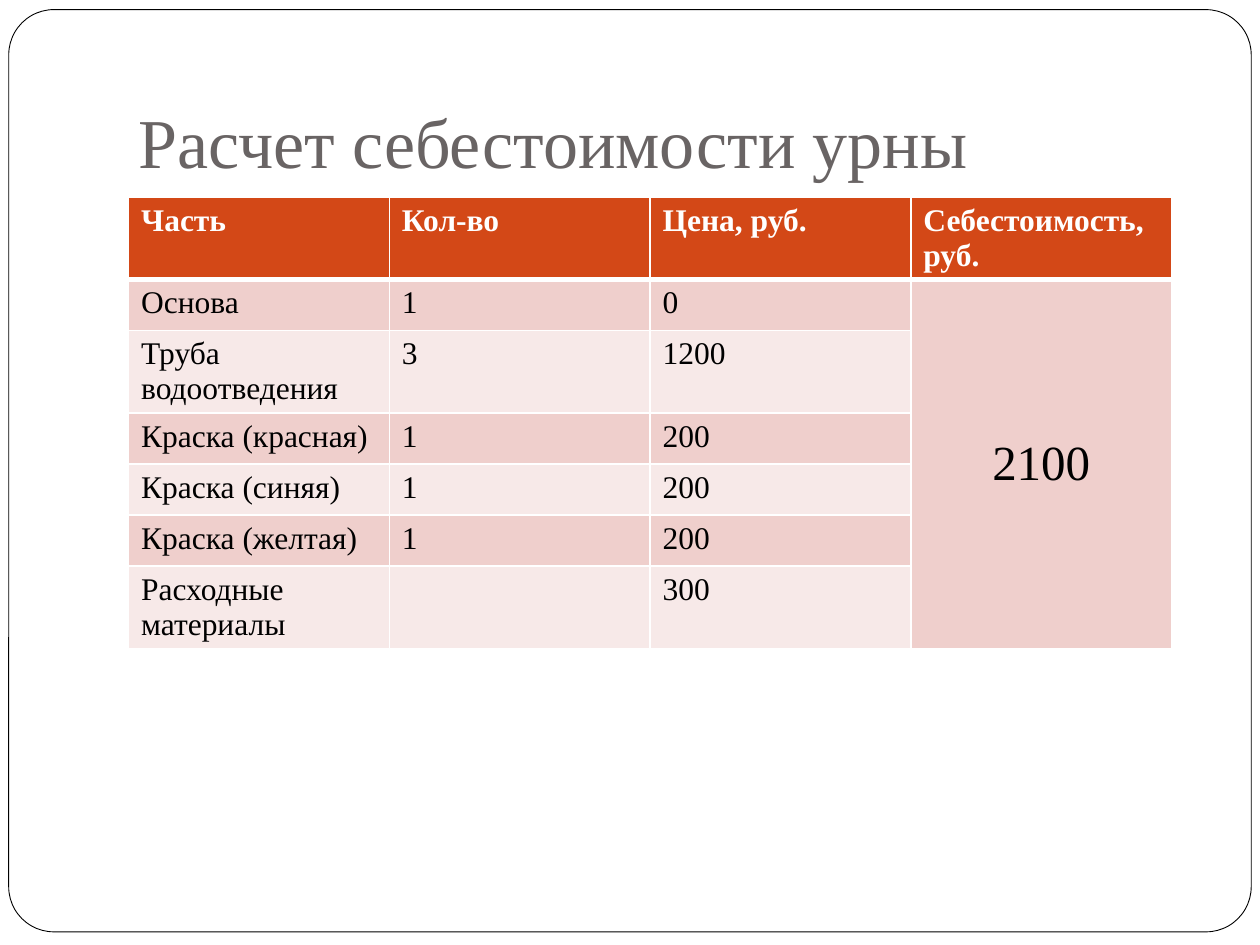
"""Build a slide with the cost calculation table of a litter bin."""
from lxml.etree import SubElement
from pptx import Presentation
from pptx.dml.color import RGBColor
from pptx.enum.shapes import MSO_SHAPE
from pptx.enum.text import MSO_ANCHOR, PP_ALIGN
from pptx.oxml.ns import qn
from pptx.util import Pt

TITLE = "Расчет себестоимости урны"
HEADER = ("Часть", "Кол-во", "Цена, руб.", "Себестоимость, руб.")
PARTS = [
    ("Основа", "1", "0"),
    ("Труба водоотведения", "3", "1200"),
    ("Краска (красная)", "1", "200"),
    ("Краска (синяя)", "1", "200"),
    ("Краска (желтая)", "1", "200"),
    ("Расходные материалы", "", "300"),
]
TOTAL = "2100"

THEME = {
    "font": "Times New Roman",
    "title": {"size": Pt(40), "color": "696464", "bold": False},
    "header": {"size": Pt(18), "color": "FFFFFF", "bold": True},
    "body": {"size": Pt(18), "color": "000000", "bold": False},
    "total": {"size": Pt(28), "color": "000000", "bold": False},
    "header_fill": "D34817",
    "bands": ("EFCFCC", "F7E9E8"),
    "paper": "FFFFFF",
    "frame_line": "000000",
}
FRAME_BOX = (Pt(5), Pt(5.5), Pt(710), Pt(527))
TITLE_BOX = (Pt(72), Pt(21.6), Pt(612), Pt(90))
TABLE_LEFT, TABLE_TOP = Pt(73.5), Pt(112.5)
COLUMN_WIDTH, ROW_HEIGHT = Pt(149), Pt(29.2)
THIN, THICK = Pt(1), Pt(3)


def set_values(target, values):
    for name, value in values.items():
        setattr(target, name, value)


def write(text_frame, text, style, alignment=PP_ALIGN.LEFT):
    paragraph = text_frame.paragraphs[0]
    paragraph.alignment = alignment
    if text:
        run = paragraph.add_run()
        run.text = text
        set_values(run.font, {"name": THEME["font"], "size": style["size"], "bold": style["bold"]})
        run.font.color.rgb = RGBColor.from_string(style["color"])


def fill_solid(target, color):
    target.fill.solid()
    target.fill.fore_color.rgb = RGBColor.from_string(color)


def set_borders(cell, top, bottom):
    properties = cell._tc.get_or_add_tcPr()
    for side, width in {"L": THIN, "R": THIN, "T": top, "B": bottom}.items():
        line = SubElement(properties, qn(f"a:ln{side}"), w=str(width))
        SubElement(SubElement(line, qn("a:solidFill")), qn("a:srgbClr"), val=THEME["paper"])


def add_frame(slide):
    frame = slide.shapes.add_shape(MSO_SHAPE.ROUNDED_RECTANGLE, *FRAME_BOX)
    frame.adjustments[0] = 0.049
    frame.shadow.inherit = False
    fill_solid(frame, THEME["paper"])
    frame.line.color.rgb = RGBColor.from_string(THEME["frame_line"])
    frame.line.width = Pt(0.5)
    slide.shapes.title._element.addprevious(frame._element)


def add_title(slide):
    title = slide.shapes.title
    set_values(title, dict(zip(("left", "top", "width", "height"), TITLE_BOX)))
    set_values(title.text_frame, {
        "vertical_anchor": MSO_ANCHOR.BOTTOM, "word_wrap": True,
        "margin_left": Pt(7.2), "margin_right": Pt(7.2),
        "margin_top": Pt(3.6), "margin_bottom": Pt(7.2),
    })
    write(title.text_frame, TITLE, THEME["title"])


def add_cost_table(slide):
    rows = [HEADER] + [part + ("",) for part in PARTS]
    table = slide.shapes.add_table(
        len(rows), len(HEADER), TABLE_LEFT, TABLE_TOP,
        COLUMN_WIDTH * len(HEADER), ROW_HEIGHT * len(rows),
    ).table
    for column in table.columns:
        column.width = COLUMN_WIDTH
    last = len(HEADER) - 1
    for row_index, row in enumerate(rows):
        table.rows[row_index].height = ROW_HEIGHT
        style = THEME["body"] if row_index else THEME["header"]
        band = THEME["bands"][(row_index - 1) % 2] if row_index else THEME["header_fill"]
        for column_index, text in enumerate(row):
            cell = table.cell(row_index, column_index)
            set_borders(cell, THICK if row_index == 1 else THIN, THIN if row_index else THICK)
            fill_solid(cell, THEME["bands"][0] if row_index and column_index == last else band)
            write(cell.text_frame, text, style)
    total = table.cell(1, last)
    total.merge(table.cell(len(PARTS), last))
    total.vertical_anchor = MSO_ANCHOR.MIDDLE
    write(total.text_frame, TOTAL, THEME["total"], PP_ALIGN.CENTER)


def main():
    presentation = Presentation()
    set_values(presentation, {"slide_width": Pt(720), "slide_height": Pt(540)})
    slide = presentation.slides.add_slide(presentation.slide_layouts[5])
    add_frame(slide)
    add_title(slide)
    add_cost_table(slide)
    presentation.save("out.pptx")


if __name__ == "__main__":
    main()
